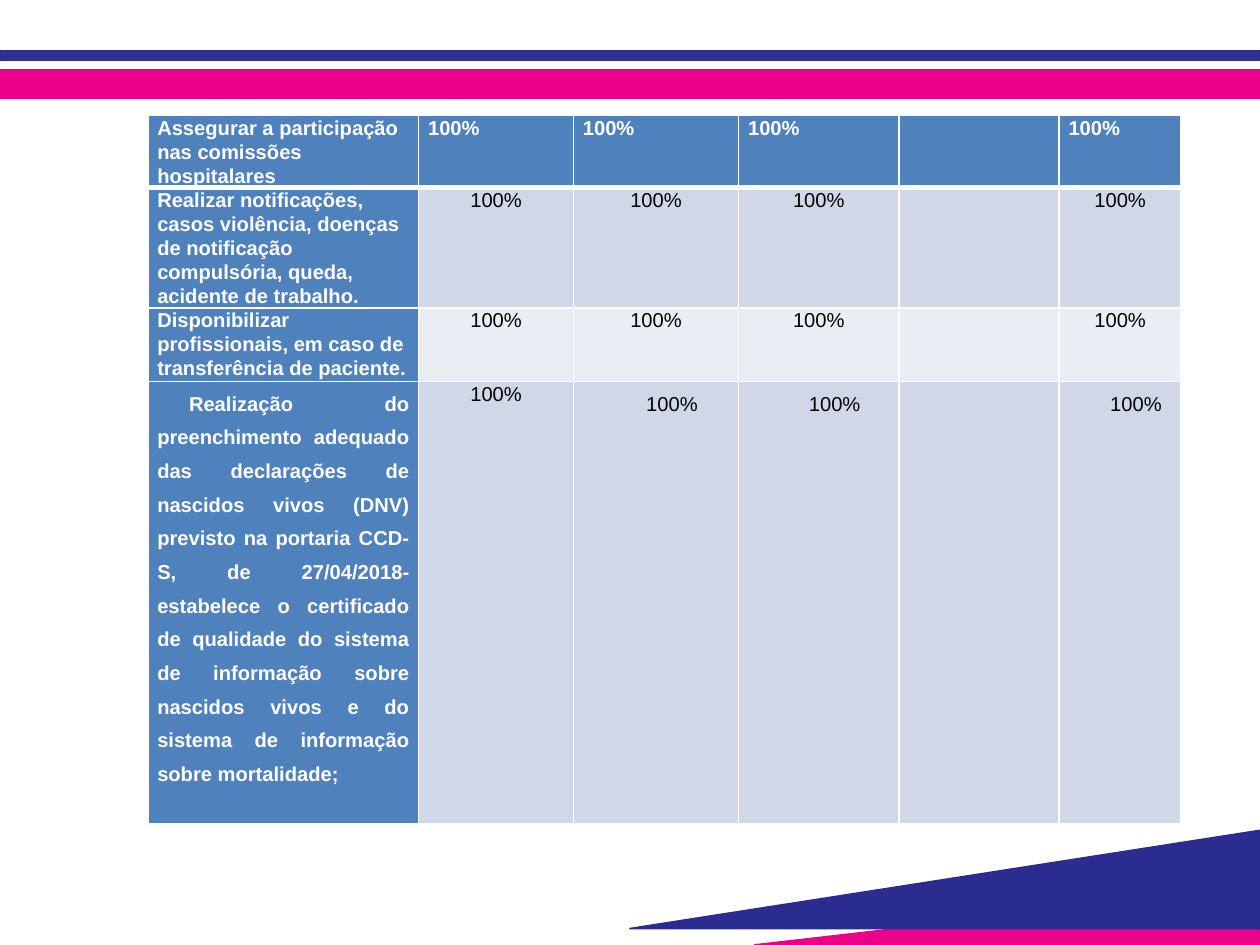
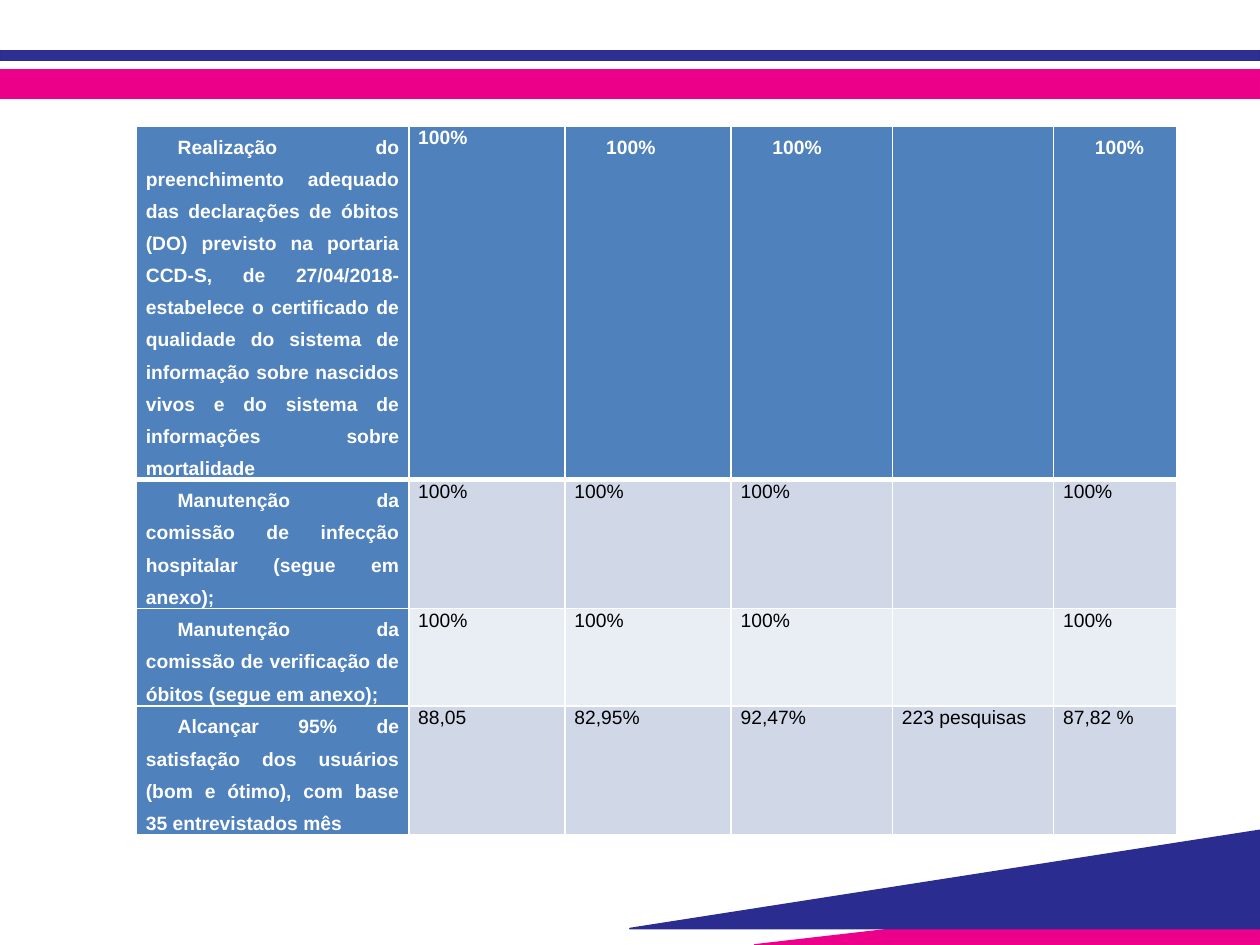
import dataclasses

import lxml.etree
import pptx
import pptx.dml.color
import pptx.enum.shapes
import pptx.enum.text
import pptx.oxml.ns
import pptx.util

Cm = pptx.util.Cm
Pt = pptx.util.Pt
Align = pptx.enum.text.PP_ALIGN


@dataclasses.dataclass(frozen=True)
class Theme:
    font: str = "Arial"
    navy: str = "2B2C90"
    navy_band: str = "2D2F92"
    pink: str = "EC0089"
    pink_edge: str = "EC018B"
    header: str = "4F81BD"
    body_bands: tuple = ("D0D8E8", "E9EDF4")
    white: str = "FFFFFF"
    black: str = "000000"
    edge_width: float = 0.96
    border: float = 1
    header_border: float = 3
    goals_size: float = 11.5
    commissions_size: float = 11


@dataclasses.dataclass(frozen=True)
class Row:
    """One indicator: its label, five values and the paragraph style of each part."""
    label: str
    values: tuple
    label_style: str = "left"
    first_style: str = "left"
    value_style: str = "left"


THEME = Theme()
WIDTH, HEIGHT = 25.4, 19.05
FIRST_LINE_INDENT = Cm(0.64)

SINGLE = {"line_spacing": 1.07, "space_after": Pt(8)}
WIDE = {"line_spacing": 1.5, "space_after": Pt(8)}
PARA_STYLES = {
    "left": {"alignment": Align.LEFT, **SINGLE},
    "center": {"alignment": Align.CENTER, **SINGLE},
    "center_indent": {"alignment": Align.CENTER, **WIDE},
    "justify_indent": {"alignment": Align.JUSTIFY, **WIDE},
}

FULL = ("100%", "100%", "100%", "", "100%")

GOALS = (
    Row("Assegurar a participação nas comissões hospitalares", FULL),
    Row("Realizar notificações, casos violência, doenças de notificação compulsória, "
        "queda, acidente de trabalho.", FULL, "left", "center", "center"),
    Row("Disponibilizar profissionais, em caso de transferência de paciente.",
        FULL, "left", "center", "center"),
    Row("Realização do preenchimento adequado das declarações de nascidos vivos (DNV) "
        "previsto na portaria CCD-S, de 27/04/2018- estabelece o certificado de qualidade "
        "do sistema de informação sobre nascidos vivos e do sistema de informação sobre "
        "mortalidade;", FULL, "justify_indent", "center", "center_indent"),
)

COMMISSIONS = (
    Row("Realização do preenchimento adequado das declarações de óbitos (DO) previsto na "
        "portaria CCD-S, de 27/04/2018- estabelece o certificado de qualidade do sistema "
        "de informação sobre nascidos vivos e do sistema de informações sobre mortalidade",
        FULL, "justify_indent", "left", "justify_indent"),
    Row("Manutenção da comissão de infecção hospitalar (segue em anexo);",
        FULL, "justify_indent"),
    Row("Manutenção da comissão de verificação de óbitos (segue em anexo);",
        FULL, "justify_indent"),
    Row("Alcançar 95% de satisfação dos usuários (bom e ótimo), com base 35 entrevistados mês",
        ("88,05", "82,95%", "92,47%", "223 pesquisas", "87,82 %"), "justify_indent"),
)


def rgb(value):
    return pptx.dml.color.RGBColor.from_string(value)


def set_attributes(target, values):
    for name, value in values.items():
        setattr(target, name, value)


def paint(shape, fill, edge):
    shape.shadow.inherit = False
    shape.fill.solid()
    shape.fill.fore_color.rgb = rgb(fill)
    shape.line.color.rgb = rgb(edge)
    shape.line.width = Pt(THEME.edge_width)


def add_band(page, top, height, fill, edge):
    band = page.shapes.add_shape(pptx.enum.shapes.MSO_SHAPE.RECTANGLE,
                                 0, Cm(top), Cm(WIDTH), Cm(height))
    paint(band, fill, edge)


def add_wedge(page, left, top, bottom, fill, edge):
    """Triangle rising from its left tip to the right edge of the page."""
    builder = page.shapes.build_freeform(Cm(WIDTH), Cm(top))
    builder.add_line_segments([(Cm(left), Cm(bottom)), (Cm(WIDTH), Cm(bottom))], close=True)
    paint(builder.convert_to_shape(), fill, edge)


def add_frame(page):
    """Draw the bands and wedges that every page shares."""
    add_band(page, 1.02, 0.2, THEME.navy_band, THEME.navy)
    add_band(page, 1.41, 0.58, THEME.pink, THEME.pink_edge)
    add_wedge(page, 15.21, 17.88, HEIGHT, THEME.pink, THEME.pink_edge)
    add_wedge(page, 12.7, 16.74, 18.72, THEME.navy, THEME.navy)


def set_borders(cell, top, bottom):
    properties = cell._tc.get_or_add_tcPr()
    qn = pptx.oxml.ns.qn
    widths = {"a:lnL": THEME.border, "a:lnR": THEME.border, "a:lnT": top, "a:lnB": bottom}
    for tag, width in widths.items():
        line = lxml.etree.SubElement(properties, qn(tag), w=str(Pt(width)))
        fill = lxml.etree.SubElement(line, qn("a:solidFill"))
        lxml.etree.SubElement(fill, qn("a:srgbClr"), val=THEME.white)


def write_cell(cell, text, style, size, strong):
    set_attributes(cell, {"margin_left": Cm(0.19), "margin_right": Cm(0.19),
                          "margin_top": 0, "margin_bottom": 0})
    para = cell.text_frame.paragraphs[0]
    set_attributes(para, PARA_STYLES[style])
    if style.endswith("indent"):
        para._p.get_or_add_pPr().set("indent", str(FIRST_LINE_INDENT))
    span = para.add_run()
    span.text = text
    set_attributes(span.font, {"name": THEME.font, "size": Pt(size), "bold": strong})
    span.font.color.rgb = rgb(THEME.white if strong else THEME.black)


def add_indicator_table(page, rows, left, top, widths, heights, size):
    frame = page.shapes.add_table(len(rows), len(widths), Cm(left), Cm(top),
                                  Cm(sum(widths)), Cm(sum(heights)))
    table = frame.table
    for column, width in zip(table.columns, widths):
        column.width = Cm(width)
    for line, height in zip(table.rows, heights):
        line.height = Cm(height)

    for r, row in enumerate(rows):
        styles = [row.label_style, row.first_style] + [row.value_style] * 4
        for c, (text, style) in enumerate(zip((row.label, *row.values), styles)):
            cell = table.cell(r, c)
            strong = r == 0 or c == 0
            set_borders(cell,
                        THEME.header_border if r == 1 else THEME.border,
                        THEME.header_border if r == 0 else THEME.border)
            cell.fill.solid()
            cell.fill.fore_color.rgb = rgb(
                THEME.header if strong else THEME.body_bands[(r - 1) % 2])
            if text:
                write_cell(cell, text, style, size, strong)


def add_page(deck):
    page = deck.slides.add_slide(deck.slide_layouts[6])
    add_frame(page)
    return page


def main():
    deck = pptx.Presentation()
    set_attributes(deck, {"slide_width": Cm(WIDTH), "slide_height": Cm(HEIGHT)})

    add_indicator_table(add_page(deck), GOALS, 2.98, 2.33,
                        (5.46, 3.12, 3.33, 3.23, 3.23, 2.46),
                        (1.45, 2.42, 1.49, 8.91), THEME.goals_size)
    add_indicator_table(add_page(deck), COMMISSIONS, 2.75, 2.54,
                        (5.49, 3.15, 3.35, 3.25, 3.25, 2.49),
                        (7.12, 2.6, 1.96, 2.58), THEME.commissions_size)

    deck.save("out.pptx")


if __name__ == "__main__":
    main()
